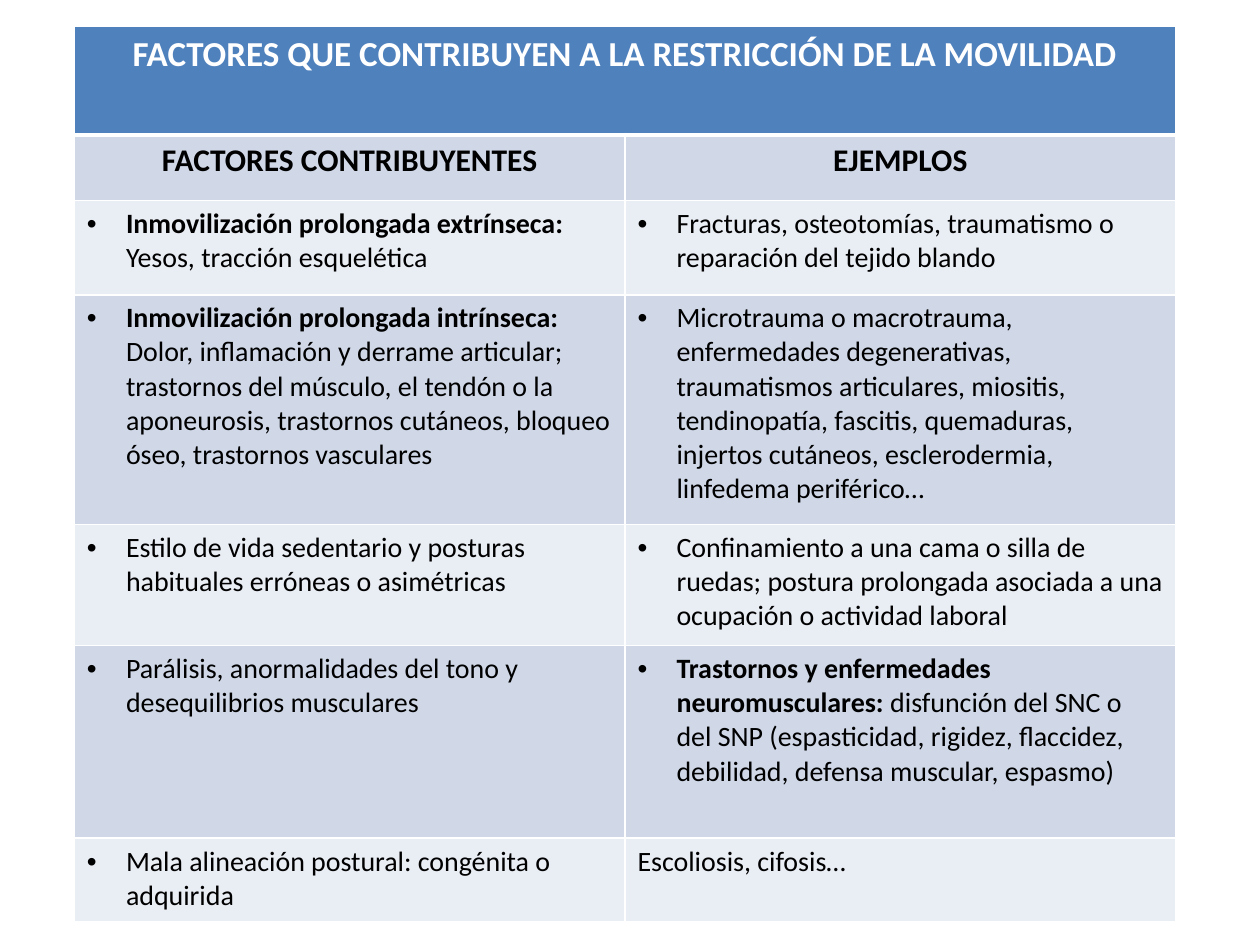
from lxml.etree import SubElement
from pptx import Presentation
from pptx.dml.color import RGBColor as Rgb
from pptx.enum.text import PP_ALIGN as Align
from pptx.oxml.ns import qn
from pptx.util import Inches, Pt

THEME = {
    "font": "Calibri",
    "title_size": 20, "heading_size": 18, "body_size": 16,
    "title_fill": "4F81BD", "bands": ("D0D8E8", "E9EDF4"),
    "light": "FFFFFF", "dark": "000000",
}
BULLET_INDENT = Inches(0.31)

title = "FACTORES QUE CONTRIBUYEN A LA RESTRICCIÓN DE LA MOVILIDAD"
headings = ("FACTORES CONTRIBUYENTES", "EJEMPLOS")
factors = [
    (("Inmovilización prolongada extrínseca: ", "Yesos, tracción esquelética"),
     ("", "Fracturas, osteotomías, traumatismo o reparación del tejido blando")),
    (("Inmovilización prolongada intrínseca: ",
      "Dolor, inflamación y derrame articular; trastornos del músculo, el tendón o la "
      "aponeurosis, trastornos cutáneos, bloqueo óseo, trastornos vasculares"),
     ("", "Microtrauma o macrotrauma, enfermedades degenerativas, traumatismos articulares, "
          "miositis, tendinopatía, fascitis, quemaduras, injertos cutáneos, esclerodermia, "
          "linfedema periférico…")),
    (("", "Estilo de vida sedentario y posturas habituales erróneas o asimétricas"),
     ("", "Confinamiento a una cama o silla de ruedas; postura prolongada asociada a una "
          "ocupación o actividad laboral")),
    (("", "Parálisis, anormalidades del tono y desequilibrios musculares"),
     ("Trastornos y enfermedades neuromusculares: ",
      "disfunción del SNC o del SNP (espasticidad, rigidez, flaccidez, debilidad, "
      "defensa muscular, espasmo)")),
    (("", "Mala alineación postural: congénita o adquirida"),
     ("", "Escoliosis, cifosis…")),
]
row_percents = (11.5, 6.9, 10, 24.3, 12.8, 20.4, 8.9)


def style_cell(cell, fill, bottom_width=1):
    properties = cell._tc.get_or_add_tcPr()
    for side, width in (("L", 1), ("R", 1), ("T", 1), ("B", bottom_width)):
        border = SubElement(properties, qn(f"a:ln{side}"), w=str(Pt(width)))
        paint = SubElement(border, qn("a:solidFill"))
        SubElement(paint, qn("a:srgbClr"), val=THEME["light"])
    cell.fill.solid()
    cell.fill.fore_color.rgb = Rgb.from_string(fill)


def style_run(run, size, color, bold):
    run.font.name = THEME["font"]
    run.font.size = Pt(size)
    run.font.bold = bold
    run.font.color.rgb = Rgb.from_string(color)


deck = Presentation()
deck.slide_width, deck.slide_height = Inches(10), Inches(7.5)
width, height = deck.slide_width, deck.slide_height
slide = deck.slides.add_slide(deck.slide_layouts[6])

factor_table = slide.shapes.add_table(
    len(row_percents), len(headings),
    int(width * 0.06), int(height * 0.03),
    int(width * 0.87), int(height * 0.95)).table
for column in factor_table.columns:
    column.width = int(width * 0.437)
for row, percent in zip(factor_table.rows, row_percents):
    row.height = int(height * percent / 100)

title_cell = factor_table.cell(0, 0)
title_cell.merge(factor_table.cell(0, 1))
for column_index in range(len(headings)):
    style_cell(factor_table.cell(0, column_index), THEME["title_fill"], bottom_width=3)
title_cell.text_frame.text = title
title_line = title_cell.text_frame.paragraphs[0]
title_line.alignment = Align.CENTER
style_run(title_line.runs[0], THEME["title_size"], THEME["light"], True)

for column_index, heading in enumerate(headings):
    heading_cell = factor_table.cell(1, column_index)
    style_cell(heading_cell, THEME["bands"][0])
    heading_cell.text_frame.text = heading
    heading_line = heading_cell.text_frame.paragraphs[0]
    heading_line.alignment = Align.CENTER
    style_run(heading_line.runs[0], THEME["heading_size"], THEME["dark"], True)

for row_index, factor in enumerate(factors, start=2):
    for column_index, (lead, detail) in enumerate(factor):
        factor_cell = factor_table.cell(row_index, column_index)
        style_cell(factor_cell, THEME["bands"][(row_index - 1) % 2])
        entry = factor_cell.text_frame.paragraphs[0]
        entry.text = lead or detail
        style_run(entry.runs[0], THEME["body_size"], THEME["dark"], bool(lead))
        if lead:
            detail_run = entry.add_run()
            detail_run.text = detail
            style_run(detail_run, THEME["body_size"], THEME["dark"], False)
        if detail != "Escoliosis, cifosis…":
            bullet_format = entry._p.get_or_add_pPr()
            bullet_format.set("marL", str(BULLET_INDENT))
            bullet_format.set("indent", str(-BULLET_INDENT))
            SubElement(bullet_format, qn("a:buFont"), typeface="Arial")
            SubElement(bullet_format, qn("a:buChar"), char="•")

frame = slide.shapes[0]
frame.left, frame.top = int(width * 0.059), int(height * 0.028)

deck.save("out.pptx")
